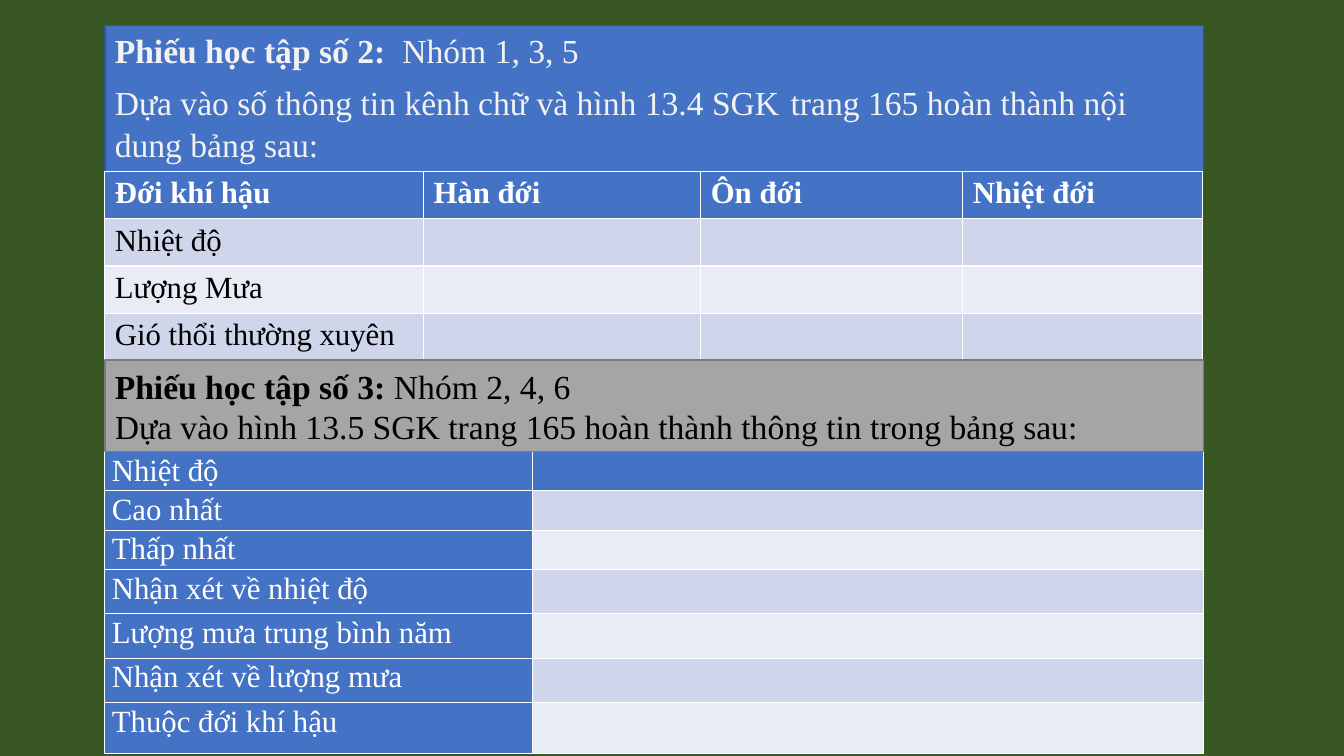
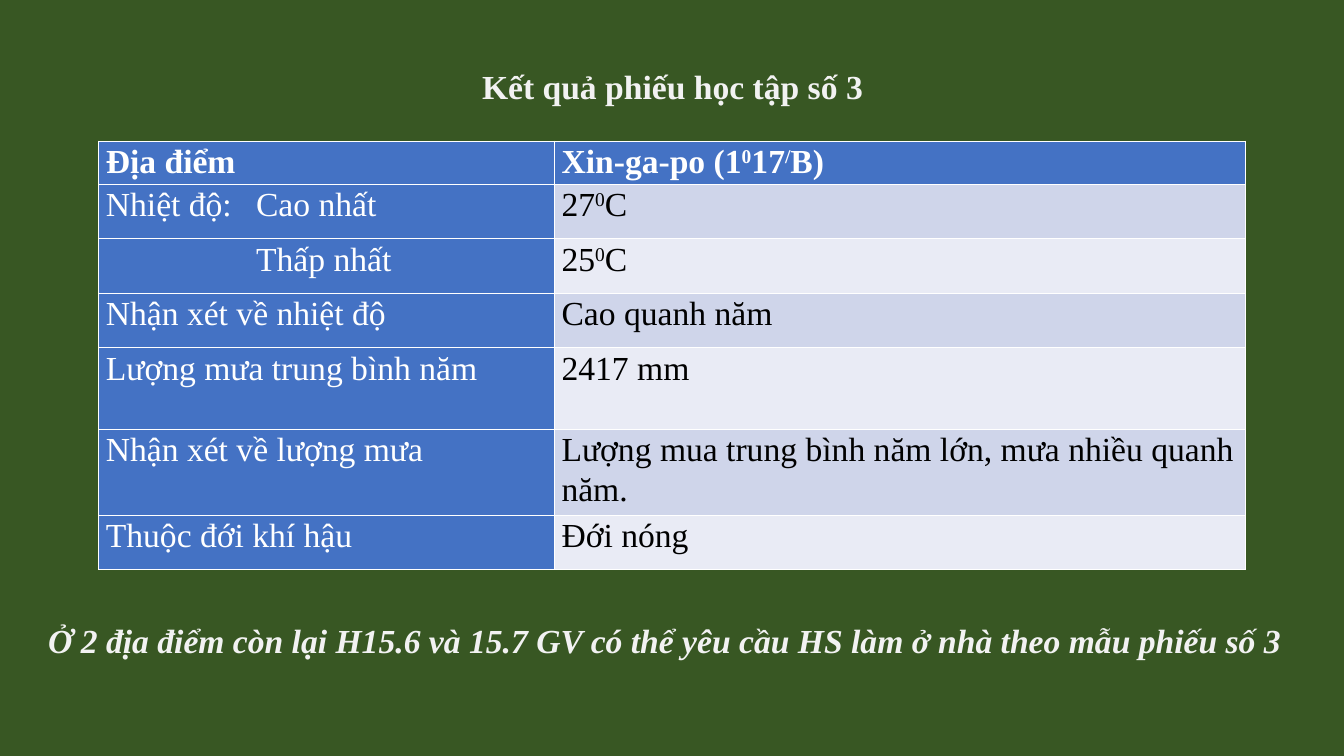
"""Build two geography worksheet slides on climate zones."""
from lxml import etree
from pptx import Presentation
from pptx import util as u
from pptx.dml.color import RGBColor
from pptx.enum import shapes, text
from pptx.oxml import ns

COLORS = {
    "board": "385723", "blue": "4472C4", "blue_line": "325491",
    "gray": "A5A5A5", "gray_line": "7A7A7A", "band": "CFD5EA",
    "pale": "E9EBF5", "chalk": "F2F2F2", "white": "FFFFFF", "black": "000000",
}
FONT = "Times New Roman"


def rgb(name):
    """Return the named colour."""
    return RGBColor.from_string(COLORS[name])


def write(p, content, size=24, color="black", bold=False, italic=False):
    """Add formatted text; parts between carets are superscript."""
    for i, part in enumerate(content.split("^")):
        r = p.add_run()
        r.text = part
        r.font.name, r.font.size = FONT, u.Pt(size)
        r.font.bold, r.font.italic = bold, italic
        r.font.color.rgb = rgb(color)
        if i % 2:
            r._r.get_or_add_rPr().set("baseline", "30000")


def add_tab_stop(p, pos):
    """Set one left tab stop on a paragraph."""
    tabs = etree.SubElement(p._p.get_or_add_pPr(), ns.qn("a:tabLst"))
    etree.SubElement(tabs, ns.qn("a:tab"), pos=str(pos), algn="l")


class Deck:
    """Hold the presentation style and the current slide."""

    def __init__(self):
        """Start an empty wide presentation."""
        self.prs = Presentation()
        self.prs.slide_width, self.prs.slide_height = u.Inches(13.33), u.Inches(7.5)

    def slide(self, layout):
        """Add a slide with the green background."""
        self.s = self.prs.slides.add_slide(self.prs.slide_layouts[layout])
        self.s.background.fill.solid()
        self.s.background.fill.fore_color.rgb = rgb("board")

    def title(self, content, left, top, width, height):
        """Place and fill the title placeholder."""
        sp = self.s.shapes.title
        sp.left, sp.top, sp.width, sp.height = map(u.Inches, (left, top, width, height))
        tf = sp.text_frame
        tf.word_wrap = False
        tf.auto_size = text.MSO_AUTO_SIZE.SHAPE_TO_FIT_TEXT
        tf.paragraphs[0].alignment = text.PP_ALIGN.CENTER
        write(tf.paragraphs[0], content, color="chalk", bold=True)

    def note(self, content, left, top, width, height):
        """Add a bold italic remark."""
        sp = self.s.shapes.add_textbox(*map(u.Inches, (left, top, width, height)))
        sp.text_frame.word_wrap = True
        write(sp.text_frame.paragraphs[0], content, color="chalk", bold=True, italic=True)

    def band(self, lines, left, top, width, height, fill, color, anchor, align):
        """Add a filled band; each line is a list of (text, format) runs."""
        sp = self.s.shapes.add_shape(
            shapes.MSO_SHAPE.RECTANGLE, *map(u.Inches, (left, top, width, height)))
        sp.shadow.inherit = False
        sp.fill.solid()
        sp.fill.fore_color.rgb = rgb(fill)
        sp.line.color.rgb = rgb(fill + "_line")
        sp.line.width = u.Pt(1)
        tf = sp.text_frame
        tf.word_wrap = True
        tf.vertical_anchor = anchor
        for i, runs in enumerate(lines):
            p = tf.add_paragraph() if i else tf.paragraphs[0]
            p.alignment = align
            for content, fmt in runs:
                write(p, content, color=color, **fmt)

    def table(self, rows, left, top, widths, heights, size,
              bold_head=True, label_column=False, tab=None):
        """Add a banded table, optionally compact with a blue label column."""
        frame = self.s.shapes.add_table(
            len(rows), len(widths), u.Inches(left), u.Inches(top),
            u.Inches(sum(widths)), u.Inches(sum(heights)))
        tbl = frame.table
        for column, width in zip(tbl.columns, widths):
            column.width = u.Inches(width)
        for i, (row, height) in enumerate(zip(rows, heights)):
            tbl.rows[i].height = u.Inches(height)
            for j, content in enumerate(row):
                cell = tbl.cell(i, j)
                blue = i == 0 or (label_column and j == 0)
                cell.fill.solid()
                cell.fill.fore_color.rgb = rgb("blue" if blue else "band" if i % 2 else "pale")
                p = cell.text_frame.paragraphs[0]
                if label_column:
                    cell.margin_left = cell.margin_right = u.Inches(0.07)
                    cell.margin_top = cell.margin_bottom = 0
                    p.line_spacing = 1.07
                if content:
                    write(p, content, size, "white" if blue else "black",
                          bold_head and i == 0)
                if "\t" in content:
                    add_tab_stop(p, u.Inches(tab))


def main():
    """Build and save both slides."""
    deck = Deck()
    left, width = 1.04, 10.9
    bold = {"bold": True}
    labels = ["Nhận xét về nhiệt độ", "Lượng mưa trung bình năm",
              "Nhận xét về lượng mưa", "Thuộc đới khí hậu"]

    deck.slide(6)
    deck.band(
        [[("Phiếu học tập số 2: ", bold), (" Nhóm 1, 3, 5", {})],
         [("Dựa vào số thông tin kênh chữ và hình 13.4 SGK", {}), (" ", {"size": 32}),
          ("trang 165 hoàn thành nội dung bảng sau:", {})]],
        left, 0.25, width, 1.45, "blue", "chalk",
        text.MSO_ANCHOR.TOP, text.PP_ALIGN.LEFT)
    factors = ["Nhiệt độ", "Lượng Mưa", "Gió thổi thường xuyên"]
    deck.table(
        [["Đới khí hậu", "Hàn đới", "Ôn đới", "Nhiệt đới"]]
        + [[factor, "", "", ""] for factor in factors],
        left, 1.7, [3.16, 2.75, 2.6, 2.38], [0.47] * 4, 22)
    deck.table(
        [[label, ""] for label in ["Nhiệt độ", "Cao nhất", "Thấp nhất"] + labels],
        left, 4.48, [4.24, 6.66], [0.39] * 3 + [0.44] * 3 + [0.51], 22,
        bold_head=False, label_column=True)
    deck.band(
        [[("Phiếu học tập số 3: ", bold), ("Nhóm 2, 4, 6", {})],
         [("Dựa vào hình 13.5 SGK trang 165 hoàn thành thông tin trong bảng sau:", {})]],
        left, 3.57, width, 0.91, "gray", "black",
        text.MSO_ANCHOR.MIDDLE, text.PP_ALIGN.JUSTIFY)

    deck.slide(5)
    answers = ["Cao quanh năm", "2417 mm",
               "Lượng mua trung bình năm lớn, mưa nhiều quanh năm.", "Đới nóng"]
    deck.table(
        [["Địa điểm", "Xin-ga-po (1^0^17^/^B)"],
         ["Nhiệt độ:\tCao nhất", "27^0^C"],
         ["\tThấp nhất", "25^0^C"]] + list(zip(labels, answers)),
        0.98, 1.4, [4.52, 6.85], [0.4] + [0.54] * 3 + [0.81] * 2 + [0.54], 24,
        label_column=True, tab=1.49)
    deck.title("Kết quả phiếu học tập số 3", 4.66, 0.6, 4.02, 0.5)
    deck.note("Ở 2 địa điểm còn lại H15.6 và 15.7 GV có thể yêu cầu HS làm ở nhà "
              "theo mẫu phiếu số 3", 0.38, 6.1, 12.55, 0.5)

    deck.prs.save("out.pptx")


if __name__ == "__main__":
    main()
